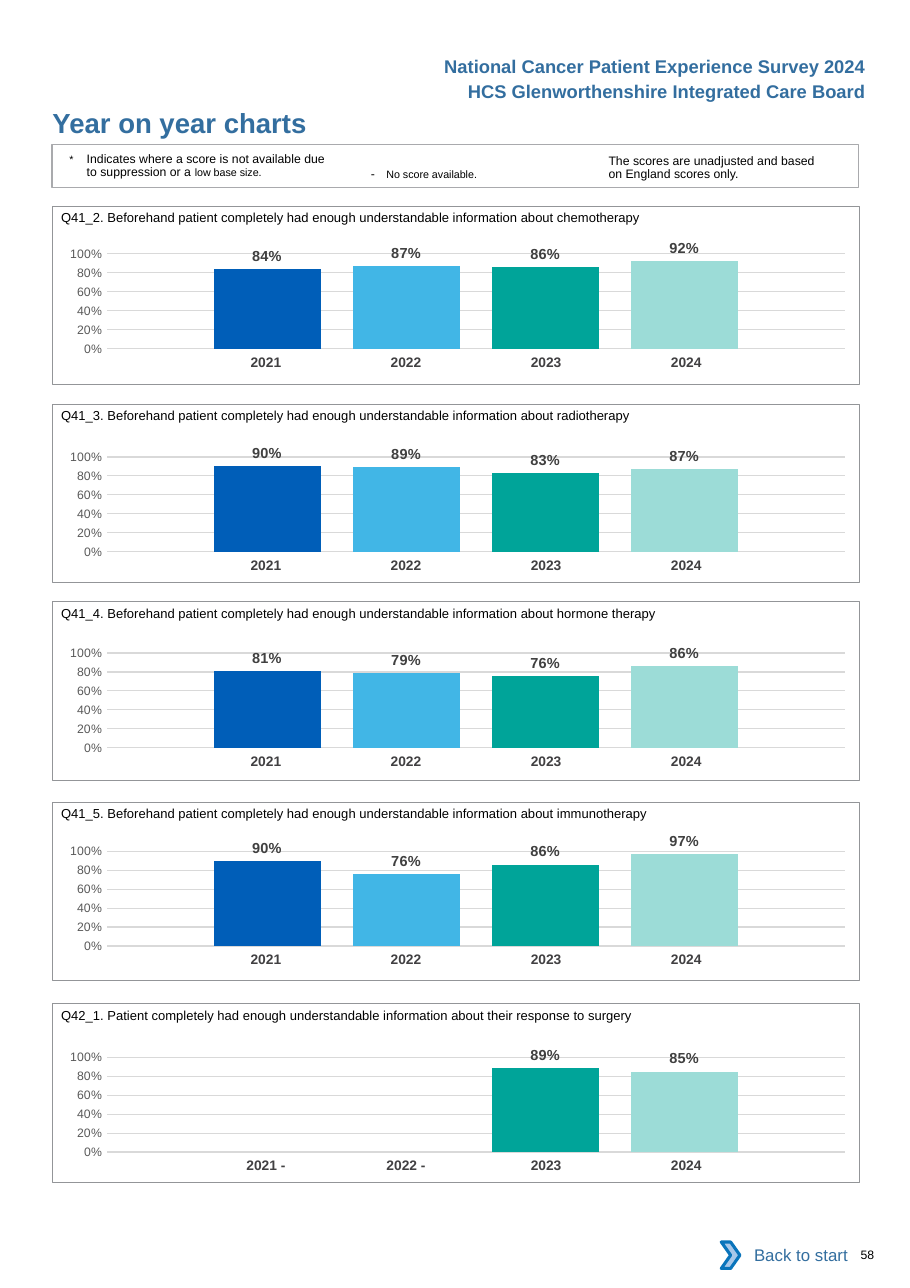
from dataclasses import dataclass

from lxml.etree import fromstring
from pptx import Presentation
from pptx.chart.data import CategoryChartData as Data
from pptx.dml.color import RGBColor as Rgb
from pptx.enum.chart import XL_CHART_TYPE as Kind
from pptx.enum.chart import XL_LABEL_POSITION as Spot
from pptx.enum.chart import XL_TICK_MARK as Tick
from pptx.enum.shapes import MSO_SHAPE as Form
from pptx.enum.text import MSO_ANCHOR as Anchor
from pptx.enum.text import PP_ALIGN as Align
from pptx.util import Cm, Pt


@dataclass(frozen=True)
class Theme:
    font: str = "Arial"
    blue: str = "336E9F"
    black: str = "000000"
    white: str = "FFFFFF"
    frame: str = "939598"
    soft: str = "A9AAAD"
    year: str = "414042"
    label: str = "404040"
    axis: str = "595959"
    grid: str = "D9D9D9"
    arrow: str = "A8C7E9"
    edge: str = "0A74BB"
    bars: tuple = ("005EB8", "41B6E6", "00A499", "9CDCD7")
    title: float = 18
    head: float = 12
    link: float = 11
    mark: float = 9.5
    years: float = 9
    ask: float = 8.5
    small: float = 8
    tiny: float = 7


T = Theme()
YEARS = ("2021", "2022", "2023", "2024")
STEM = "Beforehand patient completely had enough understandable information about "
PANELS = (
    (4.75, 0.63, "Q41_2. " + STEM + "chemotherapy", (0.84, 0.87, 0.86, 0.92)),
    (9.32, 0.74, "Q41_3. " + STEM + "radiotherapy", (0.9, 0.89, 0.83, 0.87)),
    (13.87, 0.71, "Q41_4. " + STEM + "hormone therapy", (0.81, 0.79, 0.76, 0.86)),
    (18.49, 0.66, "Q41_5. " + STEM + "immunotherapy", (0.9, 0.76, 0.86, 0.97)),
    (23.14, 0.76, "Q42_1. Patient completely had enough understandable information "
     "about their response to surgery", (None, None, 0.89, 0.85)),
)
LAYOUT = (
    '<c:layout xmlns:c="http://schemas.openxmlformats.org/drawingml/2006/chart">'
    '<c:manualLayout><c:layoutTarget val="inner"/><c:xMode val="edge"/>'
    '<c:yMode val="edge"/><c:x val="0.079"/><c:y val="0.145"/>'
    '<c:w val="0.915"/><c:h val="0.666"/></c:manualLayout></c:layout>'
)


def apply(item, look):
    for name, value in look.items():
        setattr(item, name, value)


def paint(font, size, color, bold=False):
    apply(font, {"name": T.font, "size": Pt(size), "bold": bold})
    font.color.rgb = Rgb.from_string(color)


def place(box):
    return [Cm(v) for v in box]


def write(shape, runs, color=T.black, bold=False, align=Align.LEFT,
          hang=0, lead=None):
    frame = shape.text_frame
    apply(frame, {"word_wrap": True, "vertical_anchor": Anchor.MIDDLE,
                  "margin_left": 0, "margin_right": 0,
                  "margin_top": 0, "margin_bottom": 0})
    para = frame.paragraphs[0]
    para.alignment = align
    if lead:
        para.line_spacing = Pt(lead)
    if hang:
        props = para._p.get_or_add_pPr()
        props.set("marL", str(Cm(hang)))
        props.set("indent", str(-Cm(hang)))
    for words, size in runs:
        run = para.add_run()
        run.text = words
        paint(run.font, size, color, bold)


def note(shapes, box, runs, **look):
    write(shapes.add_textbox(*place(box)), runs, **look)


def block(shapes, form, box, fill=None, line=None, width=0.5):
    shape = shapes.add_shape(form, *place(box))
    shape.shadow.inherit = False
    if fill:
        shape.fill.solid()
        shape.fill.fore_color.rgb = Rgb.from_string(fill)
    else:
        shape.fill.background()
    if line:
        shape.line.color.rgb = Rgb.from_string(line)
        shape.line.width = Pt(width)
    else:
        shape.line.fill.background()
    return shape


def header(shapes, x, y, w):
    lines = ("National Cancer Patient Experience Survey 2024",
             "HCS Glenworthenshire Integrated Care Board")
    for i, line in enumerate(lines):
        note(shapes, (x, y + i * 0.57, w, 0.76), [(line, T.head)],
             color=T.blue, bold=True, align=Align.RIGHT)
    note(shapes, (x, y + 1.3, w, 0.76), [("Year on year charts", T.title)],
         color=T.blue, bold=True)


def legend(shapes, x, y, w, h):
    group = shapes.add_group_shape().shapes
    block(group, Form.RECTANGLE, (x, y, w, h), line=T.soft, width=0.75)
    note(group, (x + 0.4, y + 0.2, 6.1, 0.6),
         [("*\t", T.tiny),
          ("Indicates where a score is not available due to suppression or a ", T.small),
          ("low base size.", T.tiny)], hang=0.4, lead=8.1)
    note(group, (x + 7.35, y + 0.42, 4, 0.5),
         [("-\t", T.small), ("No score available.", T.tiny)], hang=0.36)
    note(group, (x + 12.83, y + 0.25, 4.95, 0.6),
         [("The scores are unadjusted and based on England scores only.", T.small)],
         lead=8.1)


def years(shapes, x, y, vals):
    wide, high = 3.23, 0.69
    table = shapes.add_table(1, len(YEARS), *place((x, y, wide * 4, high))).table
    apply(table, {"first_row": False, "horz_banding": False})
    for cell, year, val in zip(table.rows[0].cells, YEARS, vals):
        cell.fill.background()
        apply(cell, {"margin_left": Cm(0.25), "margin_right": 0,
                     "margin_top": Cm(0.13), "margin_bottom": Cm(0.13)})
        para = cell.text_frame.paragraphs[0]
        para.alignment = Align.CENTER
        run = para.add_run()
        run.text = year if val is not None else year + " -"
        paint(run.font, T.years, T.year, True)


def graph(shapes, box, vals):
    data = Data(number_format="0%")
    data.categories = ["1"]
    for i, val in enumerate(vals, 1):
        data.add_series(f"Series {i}", [val])
    chart = shapes.add_chart(Kind.COLUMN_CLUSTERED, *place(box), data).chart
    apply(chart, {"has_legend": False, "has_title": False})
    paint(chart.font, T.small, T.axis)
    chart.category_axis.visible = False
    axis = chart.value_axis
    apply(axis, {"minimum_scale": 0, "maximum_scale": 1, "major_unit": 0.2,
                 "major_tick_mark": Tick.NONE, "minor_tick_mark": Tick.NONE,
                 "has_major_gridlines": True})
    axis.format.line.fill.background()
    grid = axis.major_gridlines.format.line
    grid.color.rgb = Rgb.from_string(T.grid)
    grid.width = Pt(0.75)
    apply(axis.tick_labels, {"number_format": "0%", "number_format_is_linked": False})
    paint(axis.tick_labels.font, T.small, T.axis)
    plot = chart.plots[0]
    apply(plot, {"gap_width": 200, "overlap": -30, "vary_by_categories": False})
    for bar, color in zip(plot.series, T.bars):
        bar.format.fill.solid()
        bar.format.fill.fore_color.rgb = Rgb.from_string(color)
        marks = bar.data_labels
        apply(marks, {"show_value": True, "position": Spot.OUTSIDE_END,
                      "number_format": "0%", "number_format_is_linked": False})
        paint(marks.font, T.mark, T.label, True)
    area = chart._chartSpace.chart.plotArea
    for old in area.findall("{*}layout"):
        area.remove(old)
    area.insert(0, fromstring(LAYOUT))


def panel(shapes, x, y, w, h, drop, ask, vals):
    years(shapes, x + 3.18, y + drop + 2.67, vals)
    graph(shapes, (x - 0.22, y + drop, w, 3.28), vals)
    block(shapes, Form.RECTANGLE, (x, y, w, h), line=T.frame)
    note(shapes, (x + 0.2, y, w - 0.4, 0.52), [(ask, T.ask)])


def footer(shapes, x, y):
    group = shapes.add_group_shape().shapes
    link = block(group, Form.RECTANGLE, (x + 0.18, y, 2.74, 1.07), fill=T.white)
    write(link, [("Back to start", T.link)], color=T.blue, align=Align.RIGHT)
    block(group, Form.CHEVRON, (x, y + 0.23, 0.43, 0.61),
          fill=T.arrow, line=T.edge, width=2)
    note(shapes, (x + 3.21, y + 0.36, 0.8, 0.34), [("58", T.small)])


def main():
    deck = Presentation()
    apply(deck, {"slide_width": Cm(20.98), "slide_height": Cm(29.69)})
    shapes = deck.slides.add_slide(deck.slide_layouts[6]).shapes
    header(shapes, 1.21, 1.15, 18.75)
    legend(shapes, 1.2, 3.33, 18.6, 0.99)
    for top, drop, ask, vals in PANELS:
        panel(shapes, 1.21, top, 18.6, 4.11, drop, ask, vals)
    footer(shapes, 16.63, 28.4)
    deck.save("out.pptx")


if __name__ == "__main__":
    main()
